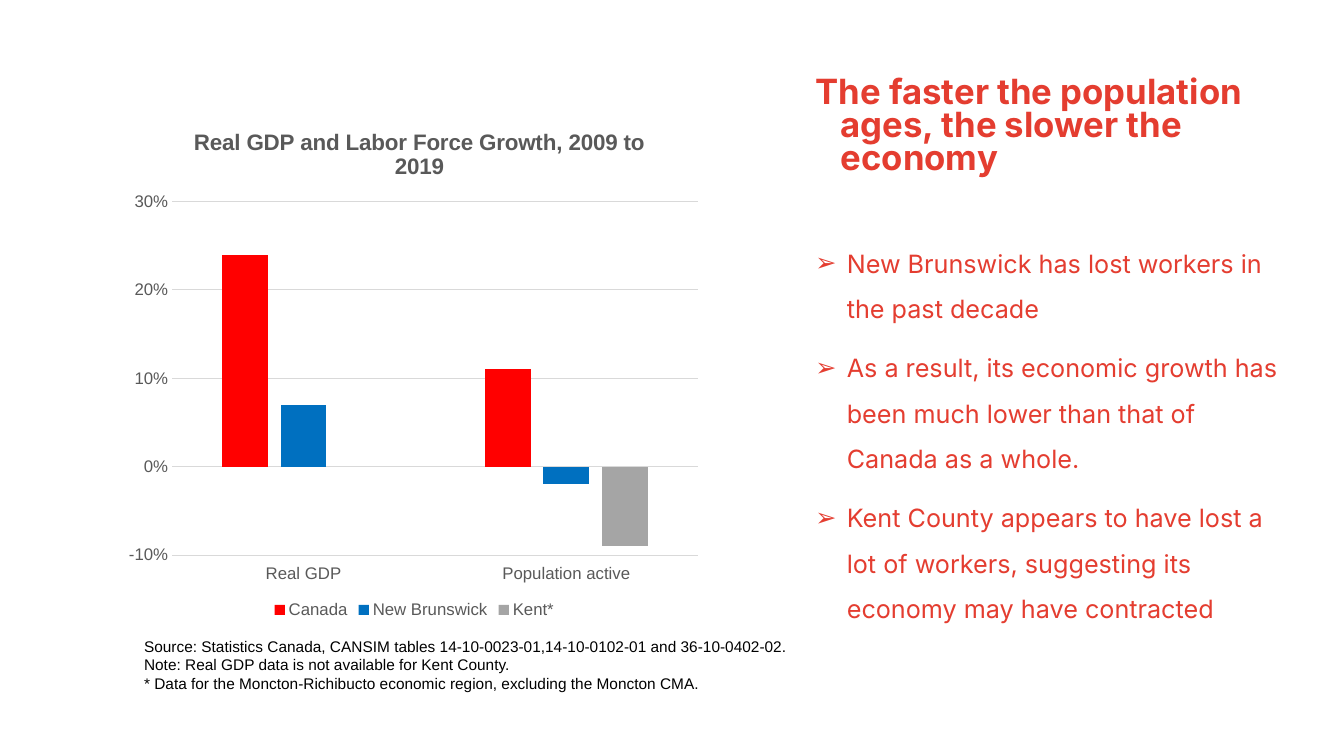
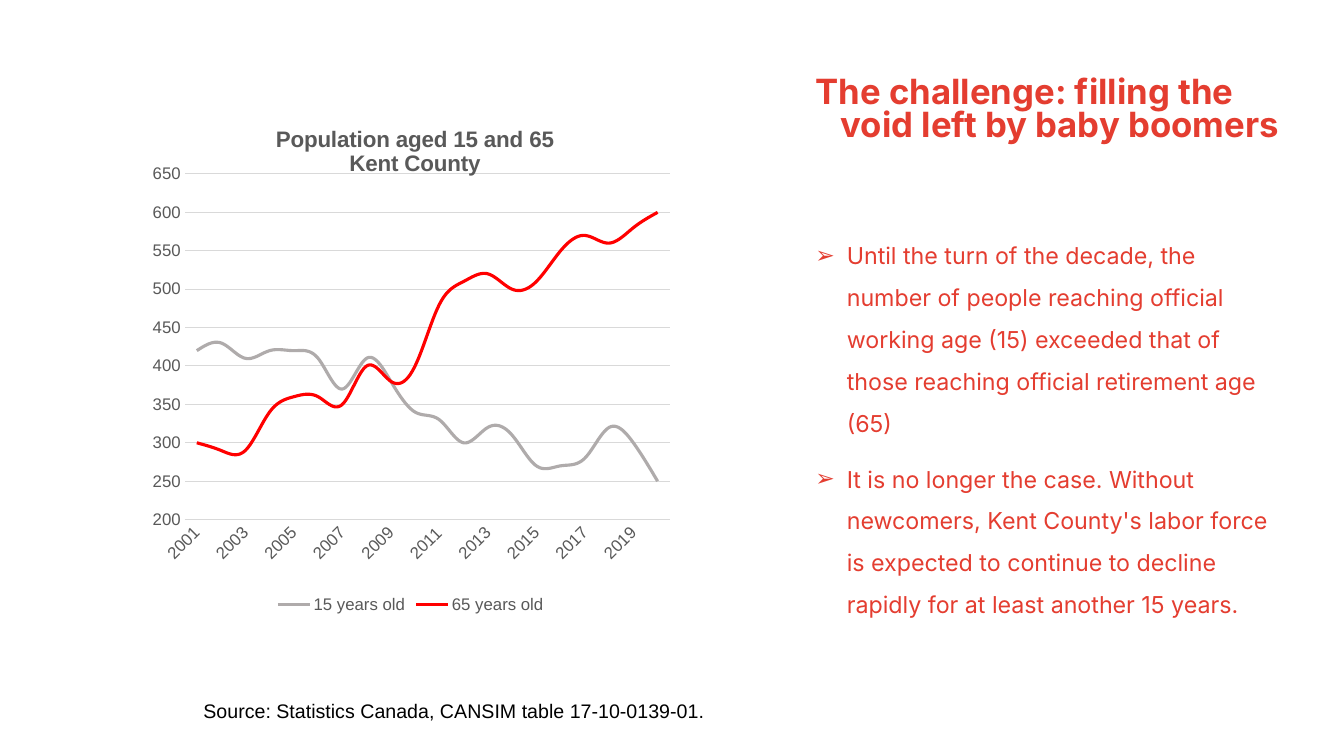
import pptx
import pptx.chart.data
import pptx.dml.color
import pptx.enum.chart
import pptx.enum.text
import pptx.oxml
import pptx.oxml.ns
import pptx.util
import lxml.etree

Pt = pptx.util.Pt
qn = pptx.oxml.ns.qn
KIND = pptx.enum.chart.XL_CHART_TYPE

HUES = {
    "brand": "E43D30", "ink": "000000", "label": "595959", "grid": "D9D9D9",
    "red": "FF0000", "blue": "0070C0", "gray": "A5A5A5", "ash": "AFABAB",
}

# Shared text styles
HEAD = {"name": "Inter", "size": Pt(24.8), "bold": True}
LABEL = {"name": "Arial", "size": Pt(12), "bold": False}
CAPTION = {"name": "Arial", "size": Pt(16), "bold": True}
FRAME = {
    "word_wrap": True,
    "auto_size": pptx.enum.text.MSO_AUTO_SIZE.NONE,
    "vertical_anchor": pptx.enum.text.MSO_ANCHOR.TOP,
}

# Shared places: left and width of the text column, title top and height
LEFT, WIDE = 557.3, 366.5
TOP, HIGH = 51.8, 93.6


def put(item, vals):
    for key, val in vals.items():
        setattr(item, key, val)


def tint(color, hue):
    color.rgb = pptx.dml.color.RGBColor.from_string(HUES[hue])


def style(font, vals, hue):
    put(font, vals)
    tint(font.color, hue)


def stroke(line, hue, width):
    tint(line.color, hue)
    line.width = Pt(width)


def add_node(root, tag, vals):
    node = lxml.etree.SubElement(root, qn(tag))
    for key, val in vals.items():
        node.set(key, str(val))
    return node


def place(root, spot, index):
    """Give a chart part a fixed place, as shares of the chart."""
    for old in root.findall(qn("c:layout")):
        root.remove(old)
    node = pptx.oxml.parse_xml(
        '<c:layout xmlns:c="http://schemas.openxmlformats.org/'
        'drawingml/2006/chart"/>')
    root.insert(index, node)
    inner = add_node(node, "c:manualLayout", {})
    for tag, val in spot.items():
        add_node(inner, "c:" + tag, {"val": val})


def fill_text(frame, lines, font, hue, form, indent=None, mark=None):
    put(frame, FRAME)
    for i, line in enumerate(lines):
        para = frame.paragraphs[0] if i == 0 else frame.add_paragraph()
        props = para._p.get_or_add_pPr()
        if indent:
            props.set("marL", str(Pt(indent)))
            props.set("indent", str(Pt(-indent * form["hang"])))
        if mark:
            color = add_node(props, "a:buClr", {})
            add_node(color, "a:srgbClr", {"val": HUES[hue]})
            add_node(props, "a:buFont", {"typeface": "Arial"})
            add_node(props, "a:buChar", {"char": mark})
        para.alignment = pptx.enum.text.PP_ALIGN.LEFT
        para.line_spacing = form["line"]
        para.space_before = Pt(form["gap"] if i else 0)
        run = para.add_run()
        run.text = line
        style(run.font, font, hue)


def add_title(slide, text):
    title = slide.shapes.title
    put(title, {"left": Pt(LEFT), "top": Pt(TOP),
                "width": Pt(WIDE), "height": Pt(HIGH)})
    put(title.text_frame, {"margin_left": Pt(7.2), "margin_right": Pt(7.2),
                           "margin_top": Pt(3.6), "margin_bottom": Pt(3.6)})
    form = {"line": 0.8, "gap": 0, "hang": 0.5}
    fill_text(title.text_frame, [text], HEAD, "brand", form, indent=36)


def add_points(slide, lines, top, high, size):
    box = slide.shapes.add_textbox(Pt(LEFT), Pt(top), Pt(WIDE), Pt(high))
    form = {"line": 1.5, "gap": 10, "hang": 5 / 9}
    fill_text(box.text_frame, lines, {"name": "Inter", "size": Pt(size)},
              "brand", form, indent=40.5, mark="➢")


def add_source(slide, lines, area, size):
    box = slide.shapes.add_textbox(*map(Pt, area))
    fill_text(box.text_frame, lines, {"name": "Arial", "size": Pt(size)},
              "ink", {"line": 1.0, "gap": 0})


def add_chart(slide, kind, area, cats, rows, lines, scale, form, spots):
    data = pptx.chart.data.CategoryChartData(number_format=form)
    data.categories = cats
    for name, vals in rows:
        data.add_series(name, vals)
    chart = slide.shapes.add_chart(kind, *map(Pt, area), data).chart
    style(chart.font, LABEL, "label")

    # Title
    chart.has_title = True
    frame = chart.chart_title.text_frame
    frame.text = "\n".join(lines)
    for para in frame.paragraphs:
        for run in para.runs:
            style(run.font, CAPTION, "label")
    place(chart.chart_title._element,
          {"xMode": "edge", "yMode": "edge", **spots["title"]}, 1)
    place(chart._chartSpace.find(".//" + qn("c:plotArea")),
          {"layoutTarget": "inner", "xMode": "edge", "yMode": "edge",
           **spots["plot"]}, 0)

    # Legend
    chart.has_legend = True
    put(chart.legend, {
        "position": pptx.enum.chart.XL_LEGEND_POSITION.BOTTOM,
        "include_in_layout": False})
    style(chart.legend.font, LABEL, "label")

    # Axes
    none = pptx.enum.chart.XL_TICK_MARK.NONE
    for axis in (chart.category_axis, chart.value_axis):
        put(axis, {"major_tick_mark": none, "minor_tick_mark": none})
        style(axis.tick_labels.font, LABEL, "label")
    stroke(chart.category_axis.format.line, "grid", 0.75)
    axis = chart.value_axis
    put(axis, scale)
    axis.has_major_gridlines = True
    stroke(axis.major_gridlines.format.line, "grid", 0.75)
    axis.format.line.fill.background()
    put(axis.tick_labels, {"number_format": form,
                           "number_format_is_linked": False})
    chart.plots[0].vary_by_categories = False
    return chart


def add_bars(slide):
    rows = [("Canada", (0.24, 0.11)), ("New Brunswick", (0.07, -0.02)),
            ("Kent*", (None, -0.09))]
    chart = add_chart(
        slide, KIND.COLUMN_CLUSTERED, (85, 73.4, 421.9, 371.5),
        ["Real GDP", "Population active"], rows,
        ["Real GDP and Labor Force Growth, 2009 to 2019"],
        {"minimum_scale": -0.1, "maximum_scale": 0.3, "major_unit": 0.1},
        "0%",
        {"title": {"x": 0.12, "y": 0.04},
         "plot": {"x": 0.09, "y": 0.19, "w": 0.89, "h": 0.68}})
    put(chart.plots[0], {"gap_width": 219, "overlap": -27})
    low = pptx.enum.chart.XL_TICK_LABEL_POSITION.LOW
    chart.category_axis.tick_label_position = low
    for bar, hue in zip(chart.series, ("red", "blue", "gray")):
        bar.format.fill.solid()
        tint(bar.format.fill.fore_color, hue)
        bar.invert_if_negative = False


def add_trends(slide):
    rows = [
        ("15 years old", (420, 430, 410, 420, 420, 410, 370, 410, 380, 340,
                          330, 300, 320, 310, 270, 270, 280, 320, 300, 250)),
        ("65 years old", (300, 290, 290, 340, 360, 360, 350, 400, 380, 400,
                          480, 510, 520, 500, 510, 550, 570, 560, 580, 600)),
    ]
    chart = add_chart(
        slide, KIND.LINE, (96.5, 72.7, 393.8, 368.6),
        [str(year) for year in range(2001, 2021)], rows,
        ["Population aged 15 and 65", "Kent County"],
        {"minimum_scale": 200, "maximum_scale": 650, "major_unit": 50},
        "General",
        {"title": {"x": 0.25, "y": 0.04},
         "plot": {"x": 0.09, "y": 0.14, "w": 0.88, "h": 0.67}})
    for trend, hue in zip(chart.series, ("ash", "red")):
        stroke(trend.format.line, hue, 2.25)
        trend.smooth = True
        trend.marker.style = pptx.enum.chart.XL_MARKER_STYLE.NONE

    # Slanted labels, every second year
    root = chart.category_axis._element
    root.find(".//" + qn("a:bodyPr")).set("rot", "-2700000")
    skip = add_node(root, "c:tickLblSkip", {"val": 2})
    root.find(qn("c:noMultiLvlLbl")).addprevious(skip)


def main():
    deck = pptx.Presentation()
    put(deck, {"slide_width": Pt(960), "slide_height": Pt(540)})
    plain = deck.slide_layouts[5]

    # Growth
    slide = deck.slides.add_slide(plain)
    add_title(slide, "The faster the population ages, the slower the economy")
    add_points(slide, [
        "New Brunswick has lost workers in the past decade",
        "As a result, its economic growth has been much lower than that of "
        "Canada as a whole.",
        "Kent County appears to have lost a lot of workers, suggesting its "
        "economy may have contracted",
    ], 162.7, 311.8, 18)
    add_bars(slide)
    add_source(slide, [
        "Source: Statistics Canada, CANSIM tables "
        "14-10-0023-01,14-10-0102-01 and 36-10-0402-02.",
        "Note: Real GDP data is not available for Kent County.",
        "* Data for the Moncton-Richibucto economic region, excluding the "
        "Moncton CMA.",
    ], (95.8, 451.4, 499, 47.5), 11)

    # Ageing
    slide = deck.slides.add_slide(plain)
    add_title(slide, "The challenge: filling the void left by baby boomers")
    add_points(slide, [
        "Until the turn of the decade, the number of people reaching "
        "official working age (15) exceeded that of those reaching official "
        "retirement age (65)",
        "It is no longer the case. Without newcomers, Kent County's labor "
        "force is expected to continue to decline rapidly for at least "
        "another 15 years.",
    ], 159.1, 329, 16.6)
    add_source(slide, [
        "Source: Statistics Canada, CANSIM table 17-10-0139-01.",
    ], (138.2, 495.4, 673.9, 24.5), 14)
    add_trends(slide)

    deck.save("out.pptx")


if __name__ == "__main__":
    main()
